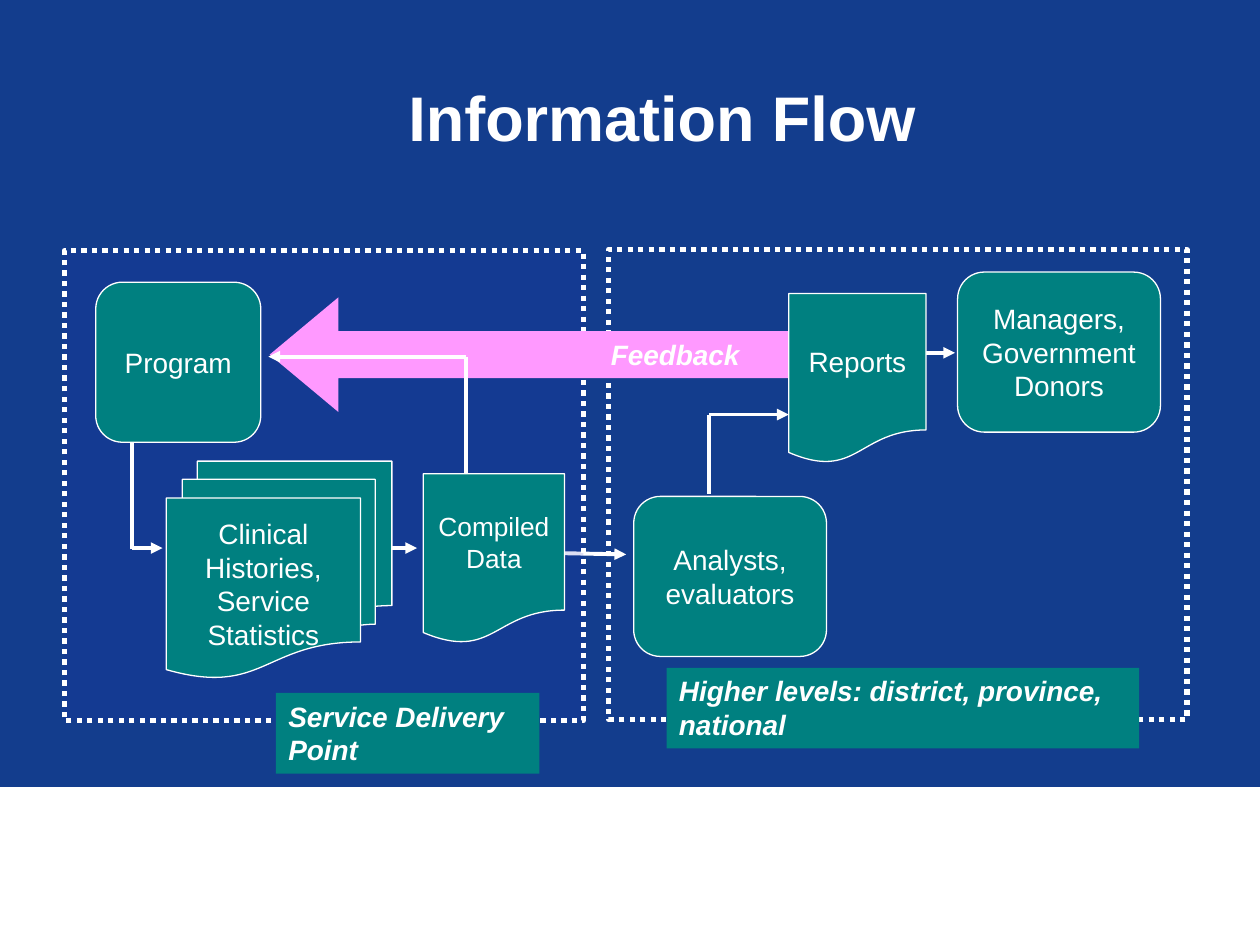
"""Build the Information Flow slide."""
from dataclasses import dataclass
from typing import Optional

from lxml import etree
from pptx import Presentation
from pptx import util as u
from pptx.dml.color import RGBColor
from pptx.enum import dml, shapes, text
from pptx.oxml import ns

Kind = shapes.MSO_SHAPE
Align = text.PP_ALIGN
WHITE, TEAL, PINK, NAVY, PANEL = "FFFFFF", "008080", "FF99FF", "133D8D", "202EB0"
STEP = Kind.FLOWCHART_ALTERNATE_PROCESS
DOC = Kind.FLOWCHART_DOCUMENT
STACK = Kind.FLOWCHART_MULTIDOCUMENT


@dataclass
class Node:
    """A flow step with centred text."""
    kind: Kind
    at: tuple
    words: str
    size: int = 16


@dataclass
class Frame:
    """A dotted frame around one level."""
    at: tuple
    fill: Optional[str] = None


@dataclass
class Label:
    """A caption in bold italics."""
    at: tuple
    words: str


@dataclass
class Arrow:
    """The broad feedback arrow."""
    at: tuple
    words: str


@dataclass
class Link:
    """A straight line, with or without an arrowhead."""
    start: tuple
    end: tuple
    tip: bool = True


ITEMS = [
    Frame((4.83, 1.98, 4.59, 3.73)),
    Label((5.29, 5.3, 3.75, 0.64), "Higher levels: district, province, national"),
    Node(STEP, (5.03, 3.94, 1.53, 1.27), "Analysts, evaluators"),
    Link((4.43, 4.39), (4.97, 4.4)),
    Frame((0.51, 1.99, 4.12, 3.73), PANEL),
    Label((2.19, 5.5, 2.09, 0.64), "Service Delivery Point"),
    Arrow((2.14, 2.36, 4.13, 0.91), "Feedback"),
    Node(STEP, (7.6, 2.16, 1.61, 1.27), "Managers, Government Donors"),
    Link((7.35, 2.8), (7.58, 2.8)),
    Node(STEP, (0.76, 2.24, 1.31, 1.27), "Program"),
    Node(DOC, (3.36, 3.76, 1.12, 1.35), "Compiled Data", 15),
    Link((3.07, 4.35), (3.31, 4.35)),
    Link((1.05, 4.35), (1.29, 4.35)),
    Node(STACK, (1.32, 3.66, 1.79, 1.72), "Clinical Histories, Service Statistics"),
    Link((1.05, 4.36), (1.05, 3.52), False),
    Node(DOC, (6.26, 2.33, 1.09, 1.35), "Reports"),
    Link((5.63, 3.92), (5.63, 3.29), False),
    Link((5.63, 3.29), (6.26, 3.29)),
    Link((3.7, 3.75), (3.7, 2.83), False),
    Link((3.7, 2.83), (2.13, 2.83)),
]


def paint(part, tone: str) -> None:
    """Give a fill one solid colour."""
    part.solid()
    part.fore_color.rgb = RGBColor.from_string(tone)


def write(shape, words: str, size: int, align: Align, bold=False, slant=False) -> None:
    """Put one run of text into a shape."""
    para = shape.text_frame.paragraphs[0]
    para.alignment = align
    run = para.add_run()
    run.text = words
    font = run.font
    font.name, font.size = "Arial", u.Pt(size)
    font.bold, font.italic = bold, slant
    paint(font.fill, WHITE)


def block(slide, kind: Kind, at: tuple, fill: Optional[str], line: float = 0):
    """Add a shape with a flat fill and a white or no line."""
    shape = slide.shapes.add_shape(kind, *map(u.Inches, at))
    shape.shadow.inherit = False
    if fill:
        paint(shape.fill, fill)
    else:
        shape.fill.background()
    if line:
        paint(shape.line.fill, WHITE)
        shape.line.width = u.Pt(line)
    else:
        shape.line.fill.background()
    shape.text_frame.word_wrap = True
    return shape


def draw_node(slide, node: Node) -> None:
    """Draw a flow step."""
    shape = block(slide, node.kind, node.at, TEAL, 0.75)
    shape.text_frame.vertical_anchor = text.MSO_ANCHOR.MIDDLE
    write(shape, node.words, node.size, Align.CENTER)


def draw_frame(slide, frame: Frame) -> None:
    """Draw a dotted frame, lightly tinted when it has a fill."""
    shape = block(slide, Kind.RECTANGLE, frame.at, frame.fill, 3)
    shape.line.dash_style = dml.MSO_LINE.ROUND_DOT
    if frame.fill:
        tone = shape.fill._xPr.find(".//" + ns.qn("a:srgbClr"))
        etree.SubElement(tone, ns.qn("a:alpha"), val="15000")


def draw_label(slide, label: Label) -> None:
    """Draw a caption."""
    shape = block(slide, Kind.RECTANGLE, label.at, TEAL)
    shape.text_frame.vertical_anchor = text.MSO_ANCHOR.TOP
    shape.text_frame.auto_size = text.MSO_AUTO_SIZE.SHAPE_TO_FIT_TEXT
    write(shape, label.words, 16, Align.LEFT, True, True)


def draw_arrow(slide, arrow: Arrow) -> None:
    """Draw the feedback arrow."""
    shape = block(slide, Kind.LEFT_ARROW, arrow.at, PINK)
    shape.adjustments[0], shape.adjustments[1] = 0.41, 0.6
    shape.text_frame.vertical_anchor = text.MSO_ANCHOR.MIDDLE
    shape.text_frame.margin_right = u.Inches(0.4)
    write(shape, arrow.words, 16, Align.RIGHT, True, True)


def draw_link(slide, link: Link) -> None:
    """Draw a line between two steps."""
    ends = map(u.Inches, link.start + link.end)
    wire = slide.shapes.add_connector(shapes.MSO_CONNECTOR.STRAIGHT, *ends)
    paint(wire.line.fill, WHITE)
    wire.line.width = u.Pt(2.25)
    if link.tip:
        etree.SubElement(wire.line._get_or_add_ln(), ns.qn("a:tailEnd"), type="triangle")
    etree.SubElement(wire._element.spPr, ns.qn("a:effectLst"))


DRAW = {Node: draw_node, Frame: draw_frame, Label: draw_label,
        Arrow: draw_arrow, Link: draw_link}


def draw_title(slide, words: str) -> None:
    """Place and fill the title."""
    title = slide.shapes.title
    title.left, title.top, title.width, title.height = map(u.Inches, (1.01, 0.3, 8.49, 1.25))
    title.text_frame.vertical_anchor = text.MSO_ANCHOR.MIDDLE
    title.text_frame.auto_size = text.MSO_AUTO_SIZE.NONE
    write(title, words, 36, Align.CENTER, True)


def main() -> None:
    """Build and save the deck."""
    deck = Presentation()
    deck.slide_width, deck.slide_height = u.Inches(10), u.Inches(7.5)
    slide = deck.slides.add_slide(deck.slide_layouts[5])
    paint(slide.background.fill, NAVY)
    block(slide, Kind.RECTANGLE, (0, 6.25, 10, 1.25), WHITE, 0.75)
    draw_title(slide, "Information Flow")
    for item in ITEMS:
        DRAW[type(item)](slide, item)
    deck.save("out.pptx")


if __name__ == "__main__":
    main()
